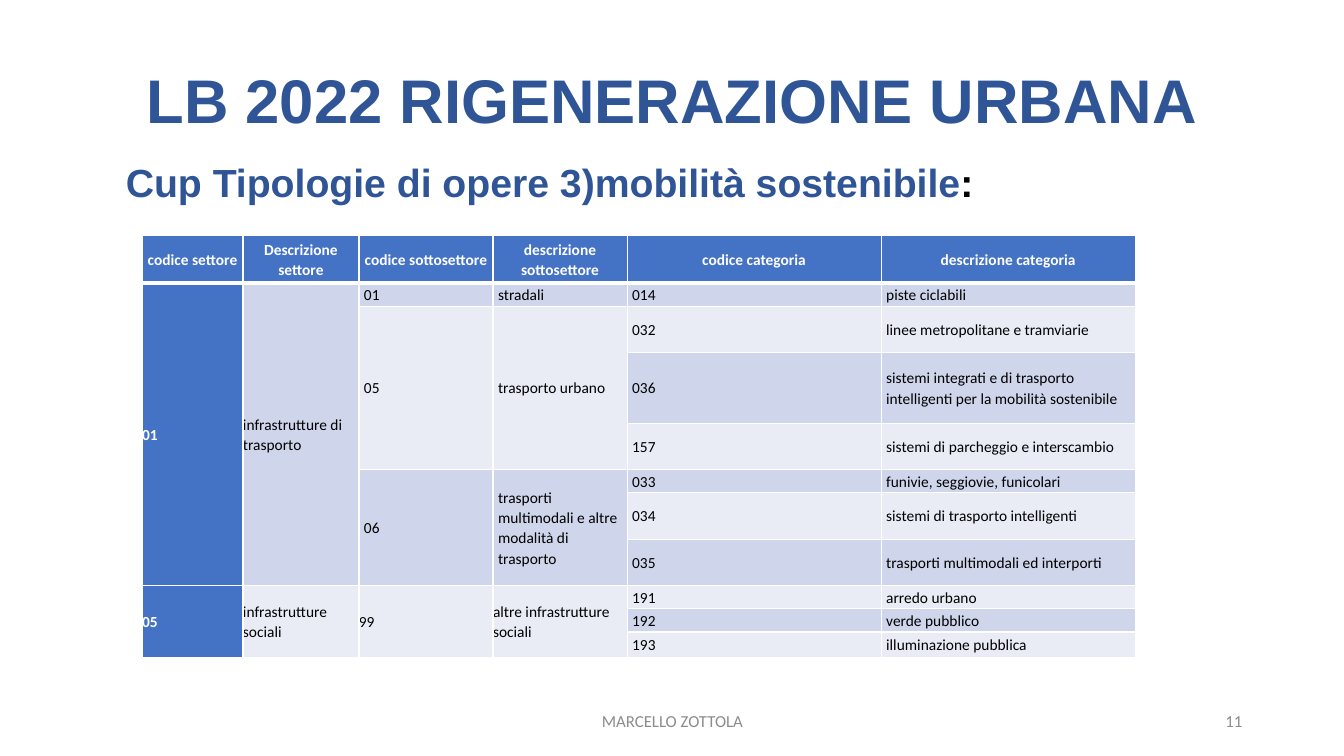
from lxml import etree
from pptx import Presentation
from pptx.dml.color import RGBColor
from pptx.enum.text import MSO_ANCHOR as ANCHOR, PP_ALIGN as ALIGN
from pptx.oxml.ns import qn
from pptx.util import Inches, Pt

NAVY = RGBColor(0x2F, 0x55, 0x97)
BLUE = RGBColor(0x44, 0x72, 0xC4)
BAND_DARK = RGBColor(0xCF, 0xD5, 0xEA)
BAND_LIGHT = RGBColor(0xE9, 0xEB, 0xF5)
GREY = RGBColor(0x8C, 0x8C, 0x8C)
WHITE = RGBColor(0xFF, 0xFF, 0xFF)
BLACK = RGBColor(0, 0, 0)

COL_WIDTHS = [1, 1.15, 1.33, 1.33, 2.52, 2.52]
ROW_HEIGHTS = [0.47, 0.23, 0.46, 0.7, 0.46, 0.23, 0.46, 0.46, 0.23, 0.23, 0.25]
CODE_COLS = 4  # columns before the category columns
SOCIAL_ROW = 8  # first row of the second sector

# None continues the cell above
ROWS = [
    ["codice settore", "Descrizione settore", "codice sottosettore",
     "descrizione sottosettore", "codice categoria", "descrizione categoria"],
    ["01", "infrastrutture di trasporto", "01", "stradali", "014", "piste ciclabili"],
    [None, None, "05", "trasporto urbano", "032", "linee metropolitane e tramviarie"],
    [None, None, None, None, "036",
     "sistemi integrati e di trasporto intelligenti per la mobilità sostenibile"],
    [None, None, None, None, "157", "sistemi di parcheggio e interscambio"],
    [None, None, "06", "trasporti multimodali e altre modalità di trasporto",
     "033", "funivie, seggiovie, funicolari"],
    [None, None, None, None, "034", "sistemi di trasporto intelligenti"],
    [None, None, None, None, "035", "trasporti multimodali ed interporti"],
    ["05", "infrastrutture sociali", "99", "altre infrastrutture sociali",
     "191", "arredo urbano"],
    [None, None, None, None, "192", "verde pubblico"],
    [None, None, None, None, "193", "illuminazione pubblica"],
]


def add_run(p, text, color, **font):
    r = p.add_run()
    r.text = text
    r.font.color.rgb = color
    for name, value in font.items():
        setattr(r.font, name, value)


def add_text(slide, box, runs, font, anchor=ANCHOR.MIDDLE, **paragraph):
    """Place one paragraph, made of (text, colour) runs, in the box."""
    tf = slide.shapes.add_textbox(*map(Inches, box)).text_frame
    tf.word_wrap = True
    tf.vertical_anchor = anchor
    p = tf.paragraphs[0]
    for name, value in paragraph.items():
        setattr(p, name, value)
    for text, color in runs:
        add_run(p, text, color, **font)


def add_headings(slide, left, top):
    arial = {"name": "Arial", "bold": True}
    add_text(slide, (left, top, 11.5, 1.26), [("LB 2022 RIGENERAZIONE URBANA", NAVY)],
             {**arial, "size": Pt(44)}, alignment=ALIGN.CENTER, line_spacing=0.9)
    add_text(slide, (left + 0.23, top + 1.17, 11.26, 0.7),
             [("Cup Tipologie di opere 3)mobilità sostenibile", NAVY), (":", BLACK)],
             {**arial, "size": Pt(28)}, anchor=ANCHOR.TOP,
             alignment=ALIGN.JUSTIFY, line_spacing=0.9, space_before=Pt(10))


def add_footer(slide, left, top):
    font = {"name": "Calibri", "size": Pt(12)}
    add_text(slide, (left, top, 4.5, 0.4), [("MARCELLO ZOTTOLA", GREY)], font,
             alignment=ALIGN.CENTER)
    add_text(slide, (left + 5, top, 3, 0.4), [("11", GREY)], font,
             alignment=ALIGN.RIGHT)


def set_borders(cell, bottom):
    """Draw white borders, placed before the fill as the schema requires."""
    tc_pr = cell._tc.get_or_add_tcPr()
    widths = {"a:lnL": 1, "a:lnR": 1, "a:lnT": 1, "a:lnB": bottom}
    for i, (tag, width) in enumerate(widths.items()):
        ln = etree.Element(qn(tag), w=str(Pt(width)))
        fill = etree.SubElement(ln, qn("a:solidFill"))
        etree.SubElement(fill, qn("a:srgbClr"), val=str(WHITE))
        tc_pr.insert(i, ln)


def style_cell(cell, row, col):
    """Set fill, borders and insets from the place of the cell."""
    band = BAND_DARK if row % 2 else BAND_LIGHT
    cell.fill.solid()
    cell.fill.fore_color.rgb = BLUE if row == 0 or col == 0 else band
    set_borders(cell, bottom=3 if row == 0 else 1)
    flush = row > 0 and (col < 2 or (row >= SOCIAL_ROW and col < CODE_COLS))
    side = Inches(0 if flush else 0.05)
    layout = {"margin_left": side, "margin_right": side, "margin_top": 0,
              "margin_bottom": 0, "vertical_anchor": ANCHOR.MIDDLE}
    for name, value in layout.items():
        setattr(cell, name, value)


def add_category_table(slide, left, top):
    frame = slide.shapes.add_table(
        len(ROWS), len(COL_WIDTHS), Inches(left), Inches(top),
        Inches(sum(COL_WIDTHS)), Inches(sum(ROW_HEIGHTS)))
    table = frame.table
    for column, width in zip(table.columns, COL_WIDTHS):
        column.width = Inches(width)
    for table_row, height in zip(table.rows, ROW_HEIGHTS):
        table_row.height = Inches(height)
    for row, texts in enumerate(ROWS):
        for col, text in enumerate(texts):
            cell = table.cell(row, col)
            style_cell(cell, row, col)
            if text is None:
                continue
            p = cell.text_frame.paragraphs[0]
            p.alignment = ALIGN.LEFT if row else ALIGN.CENTER
            p.line_spacing = 1.07
            strong = row == 0 or col == 0
            add_run(p, text, WHITE if strong else BLACK,
                    name="Calibri", size=Pt(11), bold=strong)
            last = row
            while last + 1 < len(ROWS) and ROWS[last + 1][col] is None:
                last += 1
            if last > row:
                cell.merge(table.cell(last, col))


def main():
    prs = Presentation()
    prs.slide_width, prs.slide_height = Inches(13.33), Inches(7.5)
    slide = prs.slides.add_slide(prs.slide_layouts[6])
    add_headings(slide, 0.92, 0.4)
    add_footer(slide, 4.42, 6.95)
    add_category_table(slide, 1.41, 2.34)
    prs.save("out.pptx")


if __name__ == "__main__":
    main()
